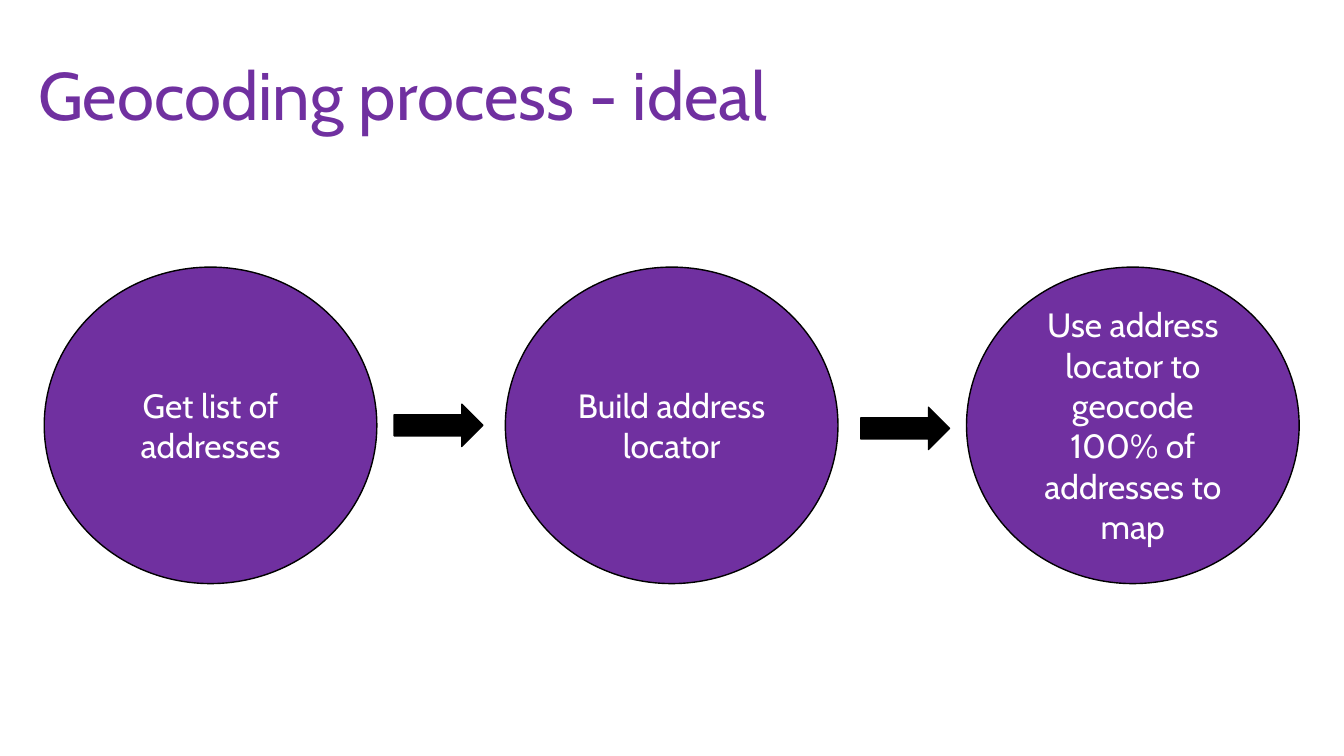
from pptx import Presentation
from pptx.dml.color import RGBColor
from pptx.enum.shapes import MSO_SHAPE as Preset
from pptx.enum.text import MSO_ANCHOR as Anchor, PP_ALIGN as Align
from pptx.util import Pt

PURPLE = RGBColor(0x70, 0x30, 0xA0)
BLACK = RGBColor(0, 0, 0)
WHITE = RGBColor(0xFF, 0xFF, 0xFF)
FONT = "Cabin"

STEPS = [
    "Get list of addresses",
    "Build address locator",
    "Use address locator to geocode 100% of addresses to map",
]
STEP_LEFT, STEP_TOP, STEP_PITCH = 31.6, 190.8, 329.4
STEP_WIDTH, STEP_HEIGHT = 237.6, 226.1
ARROW_POSITIONS = [(281.5, 288.7), (614.9, 290.9)]
ARROW_WIDTH, ARROW_HEIGHT = 63.4, 30.2


def write_text(shape, text, size, color, align=Align.LEFT, line_spacing=1.0):
    frame = shape.text_frame
    frame.word_wrap = True
    frame.vertical_anchor = Anchor.MIDDLE
    paragraph = frame.paragraphs[0]
    paragraph.alignment = align
    paragraph.line_spacing = line_spacing
    run = paragraph.add_run()
    run.text = text
    run.font.name = FONT
    run.font.size = Pt(size)
    run.font.color.rgb = color


def add_title(slide, text):
    box = slide.shapes.add_textbox(Pt(20.2), Pt(18), Pt(828), Pt(104.4))
    write_text(box, text, size=48, color=PURPLE, line_spacing=0.9)


def add_outlined_shape(slide, preset, left, top, width, height, fill):
    shape = slide.shapes.add_shape(preset, Pt(left), Pt(top), Pt(width), Pt(height))
    shape.shadow.inherit = False
    shape.fill.solid()
    shape.fill.fore_color.rgb = fill
    shape.line.color.rgb = BLACK
    shape.line.width = Pt(1)
    return shape


def add_step(slide, index, text):
    left = STEP_LEFT + index * STEP_PITCH
    circle = add_outlined_shape(
        slide, Preset.OVAL, left, STEP_TOP, STEP_WIDTH, STEP_HEIGHT, PURPLE)
    write_text(circle, text, size=24, color=WHITE, align=Align.CENTER)


def add_arrow(slide, left, top):
    add_outlined_shape(
        slide, Preset.RIGHT_ARROW, left, top, ARROW_WIDTH, ARROW_HEIGHT, BLACK)


def main():
    presentation = Presentation()
    presentation.slide_width = Pt(960)
    presentation.slide_height = Pt(540)
    slide = presentation.slides.add_slide(presentation.slide_layouts[6])
    add_title(slide, "Geocoding process - ideal")
    for index, text in enumerate(STEPS):
        add_step(slide, index, text)
    for left, top in ARROW_POSITIONS:
        add_arrow(slide, left, top)
    presentation.save("out.pptx")


if __name__ == "__main__":
    main()
